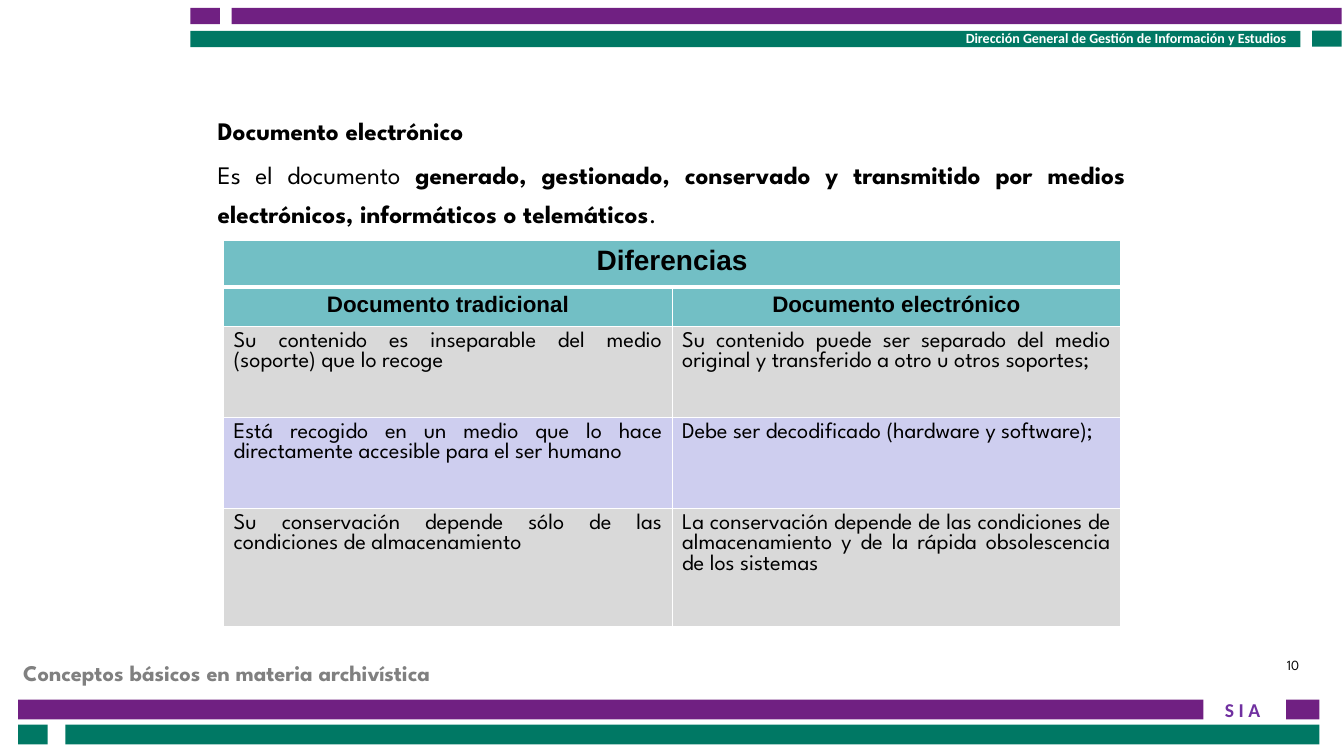
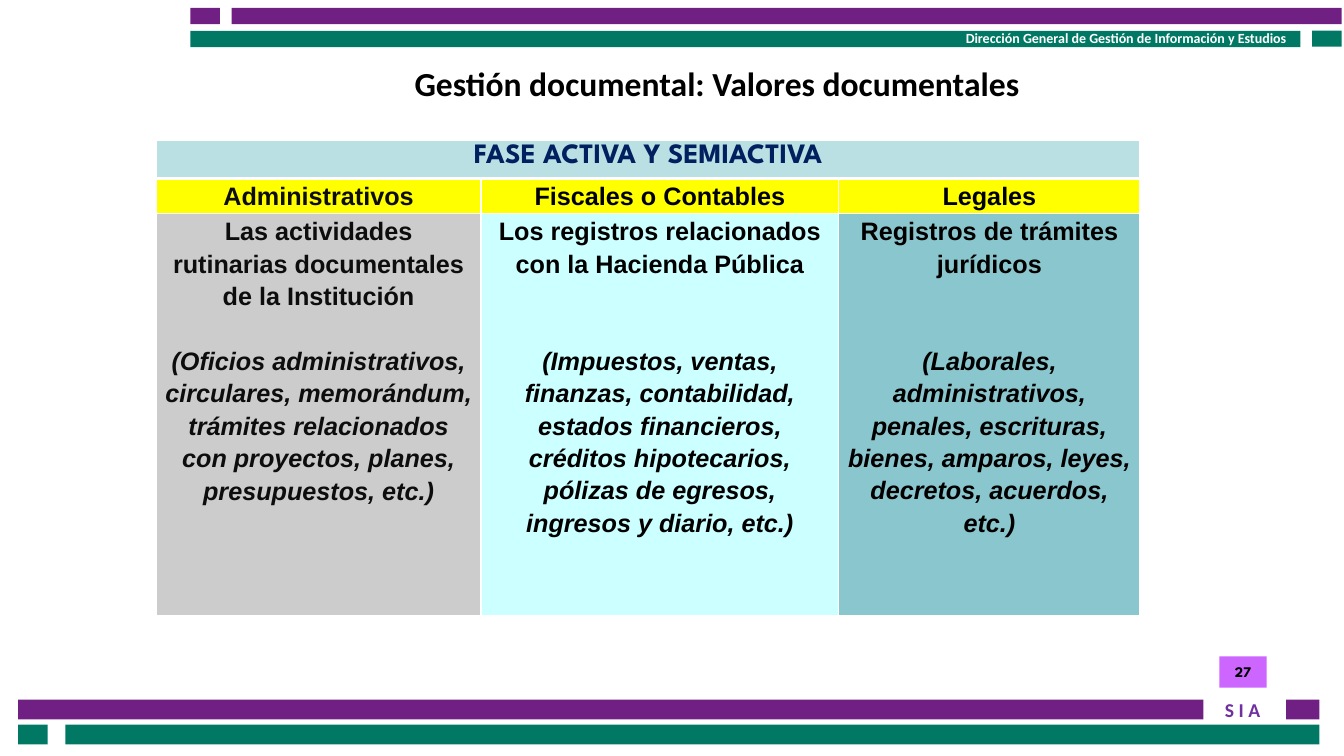
from dataclasses import dataclass, replace
from typing import Sequence

from lxml.etree import SubElement
from pptx import Presentation
from pptx.dml.color import RGBColor
from pptx.enum.shapes import MSO_SHAPE as SHAPE
from pptx.enum.text import MSO_ANCHOR as ANCHOR, MSO_AUTO_SIZE as FIT, PP_ALIGN as AL
from pptx.oxml.ns import qn
from pptx.util import Cm, Pt

PURPLE, GREEN, WHITE, BLACK = "702082", "007864", "FFFFFF", "000000"
TEAL, GRAY, LILAC, YELLOW = "72BFC5", "D9D9D9", "CECEEF", "FFFF00"
INK = "0D0D0D"
SPARTAN, ARIAL, CALIBRI = "League Spartan", "Arial", "Calibri"


@dataclass(frozen=True)
class Box:
    left: float
    top: float
    width: float
    height: float

    def emu(self) -> tuple:
        return Cm(self.left), Cm(self.top), Cm(self.width), Cm(self.height)


@dataclass(frozen=True)
class Style:
    size: float
    font: str
    color: str = BLACK
    bold: bool = True
    italic: bool = False
    align: AL = AL.CENTER
    spacing: float = 1.0
    before: float = 0


@dataclass(frozen=True)
class Para:
    text: str
    style: Style


@dataclass(frozen=True)
class Cell:
    paras: Sequence[Para]
    fill: str


@dataclass(frozen=True)
class Bar:
    box: Box
    color: str


BARS = (
    Bar(Box(32.41, 17.63, 0.84, 0.5), PURPLE),
    Bar(Box(0.46, 17.63, 29.87, 0.5), PURPLE),
    Bar(Box(0.46, 18.26, 0.74, 0.5), GREEN),
    Bar(Box(1.65, 18.26, 31.6, 0.5), GREEN),
    Bar(Box(4.8, 0.2, 0.74, 0.41), PURPLE),
    Bar(Box(5.84, 0.2, 27.97, 0.41), PURPLE),
    Bar(Box(33.07, 0.77, 0.74, 0.41), GREEN),
    Bar(Box(4.8, 0.78, 27.97, 0.41), GREEN),
)


def rgb(color: str) -> RGBColor:
    return RGBColor.from_string(color)


def format_run(r, style: Style) -> None:
    f = r.font
    f.size, f.name = Pt(style.size), style.font
    f.bold, f.italic = style.bold, style.italic
    f.color.rgb = rgb(style.color)


def format_para(p, style: Style) -> None:
    p.alignment, p.line_spacing = style.align, style.spacing
    p.space_before, p.space_after = Pt(style.before), Pt(0)
    for r in p.runs:
        format_run(r, style)


def write(tf, paras: Sequence[Para]) -> None:
    tf.word_wrap = True
    tf.text = "\n".join(para.text for para in paras)
    for p, para in zip(tf.paragraphs, paras):
        format_para(p, para.style)


def place(s, box: Box) -> None:
    s.left, s.top, s.width, s.height = box.emu()
    s.text_frame.auto_size = FIT.NONE
    s.text_frame.vertical_anchor = ANCHOR.TOP


def add_text(slide, box: Box, text: str, style: Style):
    s = slide.shapes.add_textbox(*box.emu())
    write(s.text_frame, [Para(text, style)])
    return s


def add_rect(slide, box: Box, color: str):
    s = slide.shapes.add_shape(SHAPE.RECTANGLE, *box.emu())
    s.shadow.inherit = False
    s.fill.solid()
    s.fill.fore_color.rgb = rgb(color)
    s.line.fill.background()
    return s


def set_title(slide, box: Box, text: str, style: Style) -> None:
    s = slide.shapes.title
    place(s, box)
    write(s.text_frame, [Para(text, style)])


def set_borders(cell, bottom: float) -> None:
    tc_pr = cell._tc.get_or_add_tcPr()
    sides = (("a:lnL", 1), ("a:lnR", 1), ("a:lnT", 1), ("a:lnB", bottom))
    for i, (tag, width) in enumerate(sides):
        ln = SubElement(tc_pr, qn(tag), w=str(Pt(width)))
        SubElement(SubElement(ln, qn("a:solidFill")), qn("a:srgbClr"), val=WHITE)
        tc_pr.insert(i, ln)


def add_grid(slide, left: float, top: float, cols: Sequence[float], heights: Sequence[float],
             rows: Sequence[Sequence[Cell]], inset: tuple[float, float]) -> None:
    box = Box(left, top, sum(cols), sum(heights))
    table = slide.shapes.add_table(len(heights), len(cols), *box.emu()).table
    table.first_row = table.horz_banding = False
    for col, width in zip(table.columns, cols):
        col.width = Cm(width)
    for row, height in zip(table.rows, heights):
        row.height = Cm(height)
    table.cell(0, 0).merge(table.cell(0, len(cols) - 1))
    for i, row in enumerate(rows):
        for j, item in enumerate(row):
            cell = table.cell(i, j)
            cell.margin_left = cell.margin_right = Cm(inset[0])
            cell.margin_top = cell.margin_bottom = Cm(inset[1])
            cell.fill.solid()
            cell.fill.fore_color.rgb = rgb(item.fill)
            write(cell.text_frame, item.paras)
    for i in range(len(heights)):
        for j in range(len(cols)):
            set_borders(table.cell(i, j), 1 if i else 3)


def decorate_master(prs, slide) -> None:
    shapes = [add_rect(slide, bar.box, bar.color) for bar in BARS]
    header = Style(10, CALIBRI, WHITE, align=AL.RIGHT)
    shapes.append(add_text(slide, Box(21.08, 0.61, 11.58, 0.69),
                           "Dirección General de Gestión de Información y Estudios", header))
    shapes.append(add_text(slide, Box(30.45, 17.45, 1.73, 0.86), "S I A",
                           Style(14, CALIBRI, "7030A0")))
    tree = prs.slide_master.shapes.element
    for number, s in enumerate(shapes, 101):
        s.element.xpath(".//p:cNvPr")[0].set("id", str(number))
        tree.append(s.element)


def build_electronic_document(slide) -> None:
    set_title(slide, Box(0.33, 16.48, 12.52, 1.4), "Conceptos básicos en materia archivística",
              Style(16, SPARTAN, "808080", align=AL.LEFT))
    body = slide.placeholders[1]
    place(body, Box(5.23, 2.4, 23.39, 3.5))
    tf = body.text_frame
    heading = Style(18, SPARTAN, align=AL.JUSTIFY, spacing=1.5)
    plain = replace(heading, bold=False, spacing=1.3, before=3)
    write(tf, [Para("Documento electrónico", heading), Para("Es el documento ", plain)])
    definition = tf.paragraphs[1]
    for text, bold in (("generado, gestionado, conservado y transmitido por medios "
                        "electrónicos, informáticos o telemáticos", True), (".", False)):
        r = definition.add_run()
        r.text = text
        format_run(r, replace(plain, bold=bold))
    for p in tf.paragraphs:
        p_pr = p._p.get_or_add_pPr()
        p_pr.set("marL", "0")
        p_pr.set("indent", "0")
        SubElement(p_pr, qn("a:buNone"))

    head = Style(20, ARIAL)
    subhead = replace(head, size=16)
    text = Style(16, SPARTAN, bold=False, align=AL.JUSTIFY)
    differences = (
        ("Su contenido es inseparable del medio (soporte) que lo recoge",
         "Su contenido puede ser separado del medio original y transferido a otro u otros soportes;",
         GRAY),
        ("Está recogido en un medio que lo hace directamente accesible para el ser humano",
         "Debe ser decodificado (hardware y software);", LILAC),
        ("Su conservación depende sólo de las condiciones de almacenamiento",
         "La conservación depende de las condiciones de almacenamiento y de la rápida "
         "obsolescencia de los sistemas", GRAY),
    )
    rows = [[Cell([Para("Diferencias", head)], TEAL)],
            [Cell([Para(name, subhead)], TEAL)
             for name in ("Documento tradicional", "Documento electrónico")]]
    rows += [[Cell([Para(side, text)], fill) for side in (paper, digital)]
             for paper, digital, fill in differences]
    add_grid(slide, 5.64, 6.05, (11.3, 11.3), (1.19, 0.99, 2.29, 2.29, 2.97), rows, (0.25, 0.13))
    add_text(slide, Box(24.94, 16.43, 8.05, 1.32), "10",
             Style(10, SPARTAN, bold=False, align=AL.RIGHT))


def build_document_values(slide) -> None:
    set_title(slide, Box(6.6, 1.45, 22.94, 1.27), "Gestión documental: Valores documentales",
              Style(24, CALIBRI))
    head = Style(20, SPARTAN, "002060", spacing=1.15)
    base = Style(18, ARIAL, spacing=1.15)
    values = (
        ("Administrativos", "Las actividades rutinarias documentales de la Institución",
         "(Oficios administrativos, circulares, memorándum, trámites relacionados con proyectos, "
         "planes, presupuestos, etc.)", INK, "CCCCCC", 23),
        ("Fiscales o Contables", "Los registros relacionados con la Hacienda Pública",
         "(Impuestos, ventas, finanzas, contabilidad, estados financieros, créditos hipotecarios, "
         "pólizas de egresos, ingresos y diario, etc.)", BLACK, "CCFFFF", 46),
        ("Legales", "Registros de trámites jurídicos",
         "(Laborales, administrativos, penales, escrituras, bienes, amparos, leyes, decretos, "
         "acuerdos, etc.)", BLACK, "8AC6CD", 46),
    )
    names, details = [], []
    for name, summary, examples, color, fill, gap in values:
        style = replace(base, color=color)
        names.append(Cell([Para(name, style)], YELLOW))
        details.append(Cell([Para(summary, style),
                             Para(examples, replace(style, italic=True, before=gap))], fill))
    rows = [[Cell([Para("FASE ACTIVA Y SEMIACTIVA", head)], "BBE0E3")], names, details]
    add_grid(slide, 3.94, 3.53, (8.18, 9.02, 7.59), (0.97, 0.89, 10.13), rows, (0.2, 0))
    badge = add_rect(slide, Box(30.73, 16.54, 1.19, 0.79), "CC66FF")
    write(badge.text_frame, [Para("27", Style(10.5, SPARTAN))])
    badge.text_frame.vertical_anchor = ANCHOR.MIDDLE


def main() -> None:
    prs = Presentation()
    prs.slide_width, prs.slide_height = Cm(33.87), Cm(19.05)
    first = prs.slides.add_slide(prs.slide_layouts[1])
    decorate_master(prs, first)
    build_electronic_document(first)
    build_document_values(prs.slides.add_slide(prs.slide_layouts[5]))
    prs.save("out.pptx")


if __name__ == "__main__":
    main()
